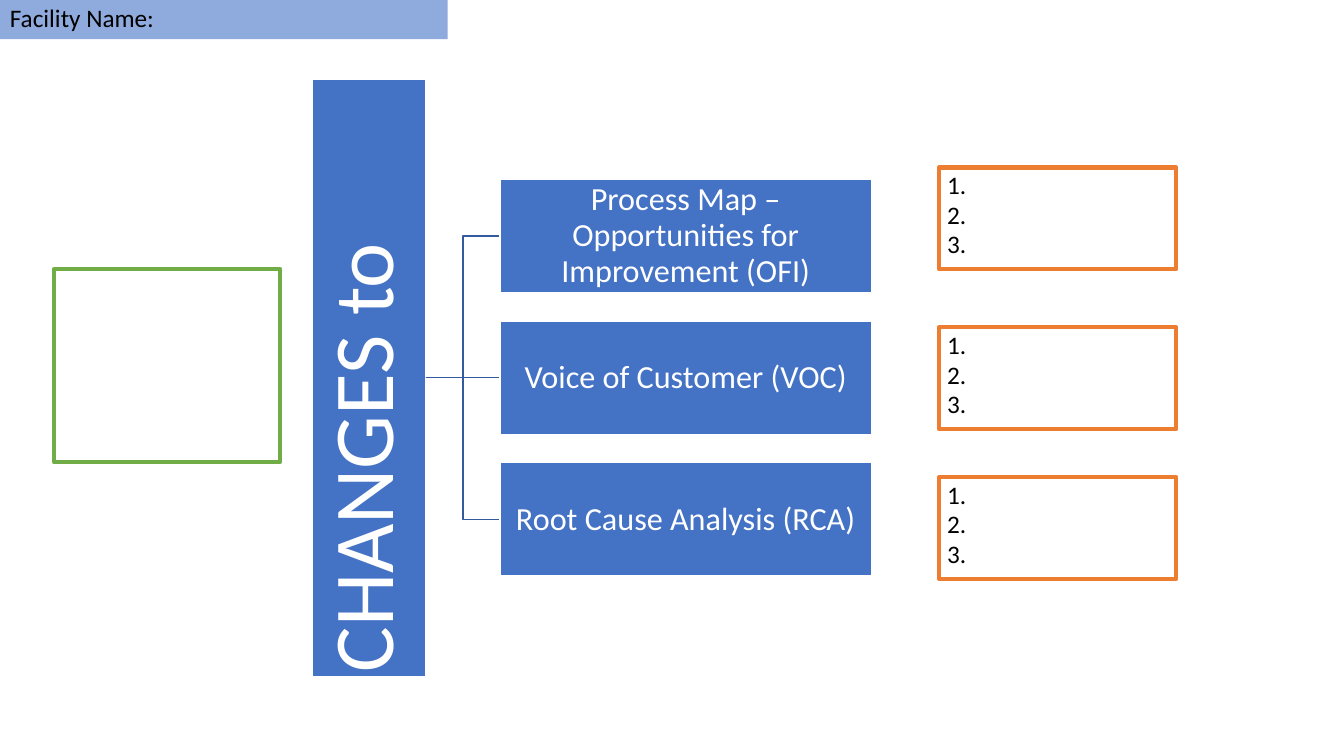
from lxml import etree
from pptx import Presentation
from pptx import util as u
from pptx.dml.color import RGBColor
from pptx.enum import shapes, text
from pptx.oxml.ns import qn

BLUE = RGBColor(0x44, 0x72, 0xC4)
LINK_BLUE = RGBColor(0x34, 0x59, 0x9C)
PALE_BLUE = RGBColor(0x8F, 0xAA, 0xDC)
ORANGE = RGBColor(0xED, 0x7D, 0x31)
GREEN = RGBColor(0x70, 0xAD, 0x47)
WHITE = RGBColor(0xFF, 0xFF, 0xFF)
BLACK = RGBColor(0, 0, 0)

BAR_RIGHT = 10.73
SOURCE_LEFT, SOURCE_TOP = 12.6, 4.52
SOURCE_WIDTH, SOURCE_HEIGHT, SOURCE_STEP = 9.37, 2.86, 3.57
SOURCES = [
    "Process Map – Opportunities for Improvement (OFI)",
    "Voice of Customer (VOC)",
    "Root Cause Analysis (RCA)",
]
LIST_TOPS = [4.22, 8.25, 12.02]


def add_box(page, left, top, width, height, fill=None, line=None, weight=1):
    """Add a rectangle in centimetres, with optional fill and outline."""
    box = page.shapes.add_shape(shapes.MSO_SHAPE.RECTANGLE, u.Cm(left),
                                u.Cm(top), u.Cm(width), u.Cm(height))
    box.shadow.inherit = False
    if fill is None:
        box.fill.background()
    else:
        box.fill.solid()
        box.fill.fore_color.rgb = fill
    if line is None:
        box.line.fill.background()
    else:
        box.line.color.rgb = line
        box.line.width = u.Pt(weight)
    return box


def add_text_area(page, left, top, width, height):
    return page.shapes.add_textbox(u.Cm(left), u.Cm(top),
                                   u.Cm(width), u.Cm(height))


def write(box, lines, size=18, color=BLACK, align=text.PP_ALIGN.LEFT,
          anchor=text.MSO_ANCHOR.TOP, spacing=None, side=0, above=0):
    """Fill a shape with paragraphs; side and above are insets in cm."""
    frame = box.text_frame
    frame.word_wrap = True
    frame.vertical_anchor = anchor
    frame.margin_left = frame.margin_right = u.Cm(side)
    frame.margin_top, frame.margin_bottom = u.Cm(above), 0
    for index, line in enumerate(lines):
        para = frame.add_paragraph() if index else frame.paragraphs[0]
        para.alignment = align
        para.line_spacing = spacing
        span = para.add_run()
        span.text = line
        span.font.name = "Calibri"
        span.font.size = u.Pt(size)
        span.font.color.rgb = color


def add_link(page, kind, start, end):
    """Join two (x, y) points given in centimetres."""
    link = page.shapes.add_connector(kind, *map(u.Cm, start + end))
    link.line.color.rgb = LINK_BLUE
    link.line.width = u.Pt(1)
    etree.SubElement(link.element.spPr, qn("a:effectLst"))


def add_source(page, index, label):
    """Add one source box and its link from the vertical bar."""
    top = SOURCE_TOP + index * SOURCE_STEP
    middle = SOURCE_TOP + SOURCE_STEP + SOURCE_HEIGHT / 2
    straight = index == 1
    kind = shapes.MSO_CONNECTOR.STRAIGHT if straight else shapes.MSO_CONNECTOR.ELBOW
    add_link(page, kind, (BAR_RIGHT, middle),
             (SOURCE_LEFT, top + SOURCE_HEIGHT / 2))
    box = add_box(page, SOURCE_LEFT, top, SOURCE_WIDTH, SOURCE_HEIGHT,
                  fill=BLUE, line=WHITE)
    write(box, [label], size=23, color=WHITE, align=text.PP_ALIGN.CENTER,
          anchor=text.MSO_ANCHOR.MIDDLE, spacing=0.93,
          side=0.2 if index else 1.4)


def add_bar(page):
    """Add the tall bar with its upward-reading heading."""
    add_box(page, 7.87, 2, BAR_RIGHT - 7.87, 15.05, fill=BLUE, line=WHITE)
    heading = add_text_area(page, 7.82, 2.11, 2.69, 14.83)
    write(heading, ["CHANGES to"], size=61, color=WHITE, spacing=u.Pt(71.3))
    heading.element.txBody.bodyPr.set("vert", "vert270")


def main():
    deck = Presentation()
    deck.slide_width, deck.slide_height = u.Cm(33.87), u.Cm(19.05)
    page = deck.slides.add_slide(deck.slide_layouts[6])

    # Bar and the three sources of change
    add_bar(page)
    for index, label in enumerate(SOURCES):
        add_source(page, index, label)

    # Numbered lists to fill in
    for top in LIST_TOPS:
        box = add_box(page, 23.67, top, 5.97, 2.57, line=ORANGE, weight=3)
        write(box, ["1.", "2.", "3."], spacing=u.Pt(21.2), side=0.2, above=0.06)

    # Empty goal frame
    add_box(page, 1.37, 6.78, 5.69, 4.87, line=GREEN, weight=3)

    # Facility name strip
    add_box(page, 0, 0, 11.28, 0.99, fill=PALE_BLUE)
    write(add_text_area(page, 0.25, 0.05, 3.9, 0.84), ["Facility Name:"])

    deck.save("out.pptx")


if __name__ == "__main__":
    main()
